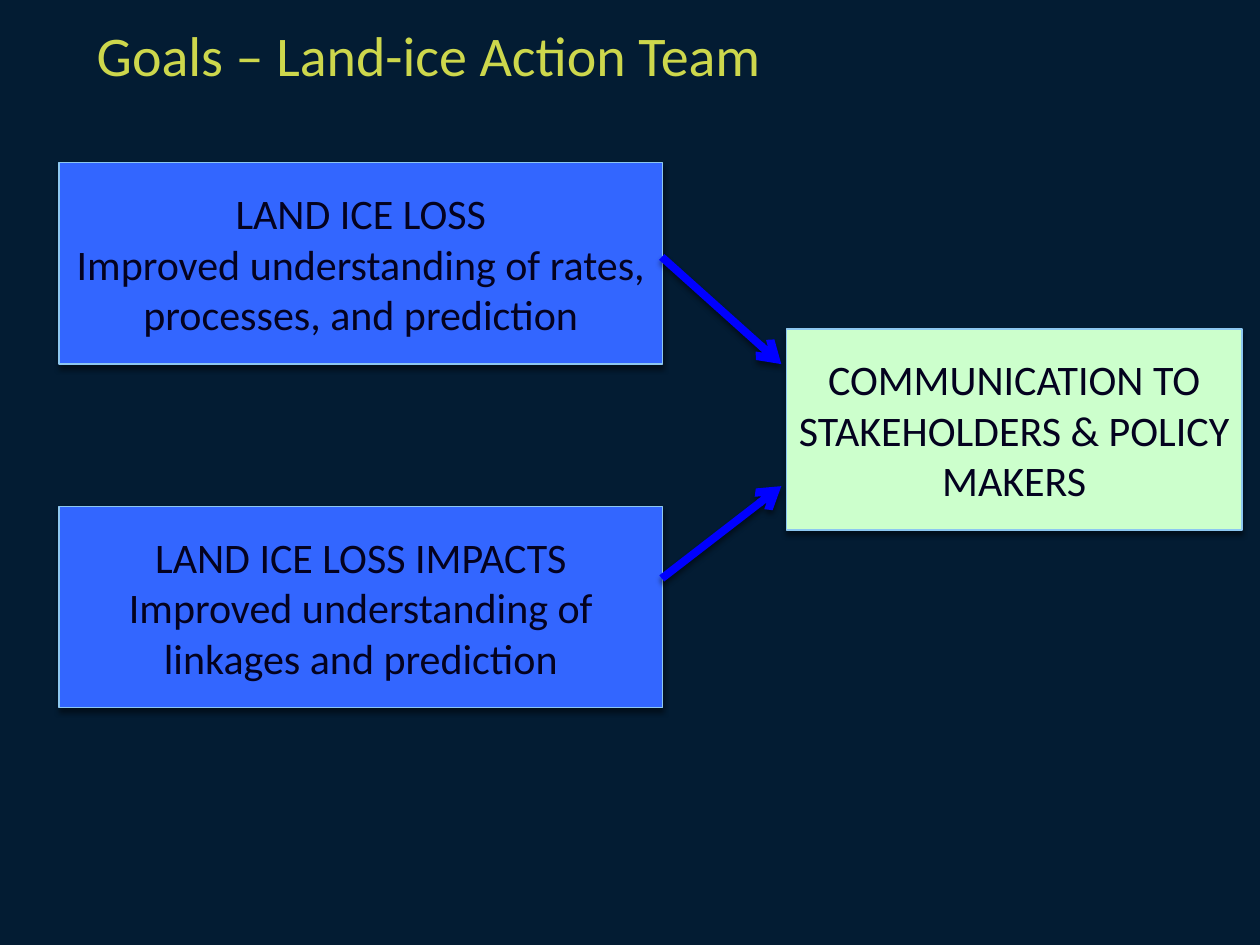
from dataclasses import dataclass

from lxml.etree import SubElement
from pptx import Presentation
from pptx.dml.color import RGBColor
from pptx.enum.shapes import MSO_CONNECTOR, MSO_SHAPE
from pptx.enum.text import MSO_ANCHOR, PP_ALIGN
from pptx.oxml.ns import qn
from pptx.slide import Slide
from pptx.text.text import TextFrame
from pptx.util import Cm, Pt


@dataclass(frozen=True)
class Theme:
    font: str = "Calibri"
    title_size: float = 32
    body_size: float = 24
    border_width: float = 0.79
    arrow_width: float = 4.5
    background: str = "031C33"
    title: str = "CDD74C"
    body: str = "04021F"
    goal: str = "3366FF"
    outcome: str = "CCFFCC"
    border: str = "8DC7F0"
    arrow: str = "0000FF"
    shadow: str = "000000"


@dataclass(frozen=True)
class Box:
    """A card of the diagram, measured in centimetres."""
    left: float
    top: float
    width: float
    fill: str
    paragraphs: tuple[str, ...]


@dataclass(frozen=True)
class Arrow:
    """A link between cards, measured in centimetres."""
    start: tuple[float, float]
    end: tuple[float, float]


THEME = Theme()
BOX_HEIGHT = 4.06
GOAL_LEFT, GOAL_WIDTH = 1.19, 12.17
ARROW_START, ARROW_END = 13.34, 15.75

BOXES = (
    Box(GOAL_LEFT, 3.28, GOAL_WIDTH, THEME.goal,
        ("LAND ICE LOSS",
         "Improved understanding of rates, processes, and prediction")),
    Box(GOAL_LEFT, 10.21, GOAL_WIDTH, THEME.goal,
        ("LAND ICE LOSS IMPACTS",
         "Improved understanding of linkages and prediction")),
    Box(15.85, 6.63, 9.19, THEME.outcome,
        ("COMMUNICATION TO STAKEHOLDERS & POLICY MAKERS",)),
)
ARROWS = (
    Arrow((ARROW_START, 5.18), (ARROW_END, 7.34)),
    Arrow((ARROW_START, 11.66), (ARROW_END, 9.8)),
)


def rgb(value: str) -> RGBColor:
    return RGBColor.from_string(value)


def write(frame: TextFrame, paragraphs: tuple[str, ...], size: float,
          color: str, align: PP_ALIGN) -> None:
    frame.word_wrap = True
    frame.vertical_anchor = MSO_ANCHOR.MIDDLE
    for index, wording in enumerate(paragraphs):
        paragraph = frame.add_paragraph() if index else frame.paragraphs[0]
        paragraph.alignment = align
        run = paragraph.add_run()
        run.text = wording
        run.font.name = THEME.font
        run.font.size = Pt(size)
        run.font.color.rgb = rgb(color)


def add_shadow(properties) -> None:
    """Append a soft downward shadow; fill and line must be set already."""
    effects = SubElement(properties, qn("a:effectLst"))
    shadow = SubElement(effects, qn("a:outerShdw"), blurRad=str(Pt(3)),
                        dist=str(Pt(2.4)), dir="5400000", rotWithShape="0")
    color = SubElement(shadow, qn("a:srgbClr"), val=THEME.shadow)
    SubElement(color, qn("a:alpha"), val="45000")


def add_title(slide: Slide, wording: str) -> None:
    title = slide.shapes.add_textbox(Cm(1.7), Cm(0), Cm(22.66), Cm(2.18))
    write(title.text_frame, (wording,), THEME.title_size, THEME.title,
          PP_ALIGN.LEFT)


def add_box(slide: Slide, box: Box) -> None:
    card = slide.shapes.add_shape(MSO_SHAPE.RECTANGLE, Cm(box.left),
                                  Cm(box.top), Cm(box.width), Cm(BOX_HEIGHT))
    card.fill.solid()
    card.fill.fore_color.rgb = rgb(box.fill)
    card.line.color.rgb = rgb(THEME.border)
    card.line.width = Pt(THEME.border_width)
    add_shadow(card._element.spPr)
    frame = card.text_frame
    frame.margin_left = frame.margin_right = Cm(0.2)
    write(frame, box.paragraphs, THEME.body_size, THEME.body, PP_ALIGN.CENTER)


def add_arrow(slide: Slide, arrow: Arrow) -> None:
    ends = [Cm(value) for value in (*arrow.start, *arrow.end)]
    link = slide.shapes.add_connector(MSO_CONNECTOR.STRAIGHT, *ends)
    link.line.color.rgb = rgb(THEME.arrow)
    link.line.width = Pt(THEME.arrow_width)
    SubElement(link.line._get_or_add_ln(), qn("a:tailEnd"), type="arrow")
    add_shadow(link._element.spPr)


def main() -> None:
    deck = Presentation()
    deck.slide_width, deck.slide_height = Cm(25.4), Cm(19.05)
    slide = deck.slides.add_slide(deck.slide_layouts[6])
    slide.background.fill.solid()
    slide.background.fill.fore_color.rgb = rgb(THEME.background)
    add_title(slide, "Goals – Land-ice Action Team")
    *goals, outcome = BOXES
    for goal in goals:
        add_box(slide, goal)
    for arrow in ARROWS:
        add_arrow(slide, arrow)
    add_box(slide, outcome)
    deck.save("out.pptx")


if __name__ == "__main__":
    main()
